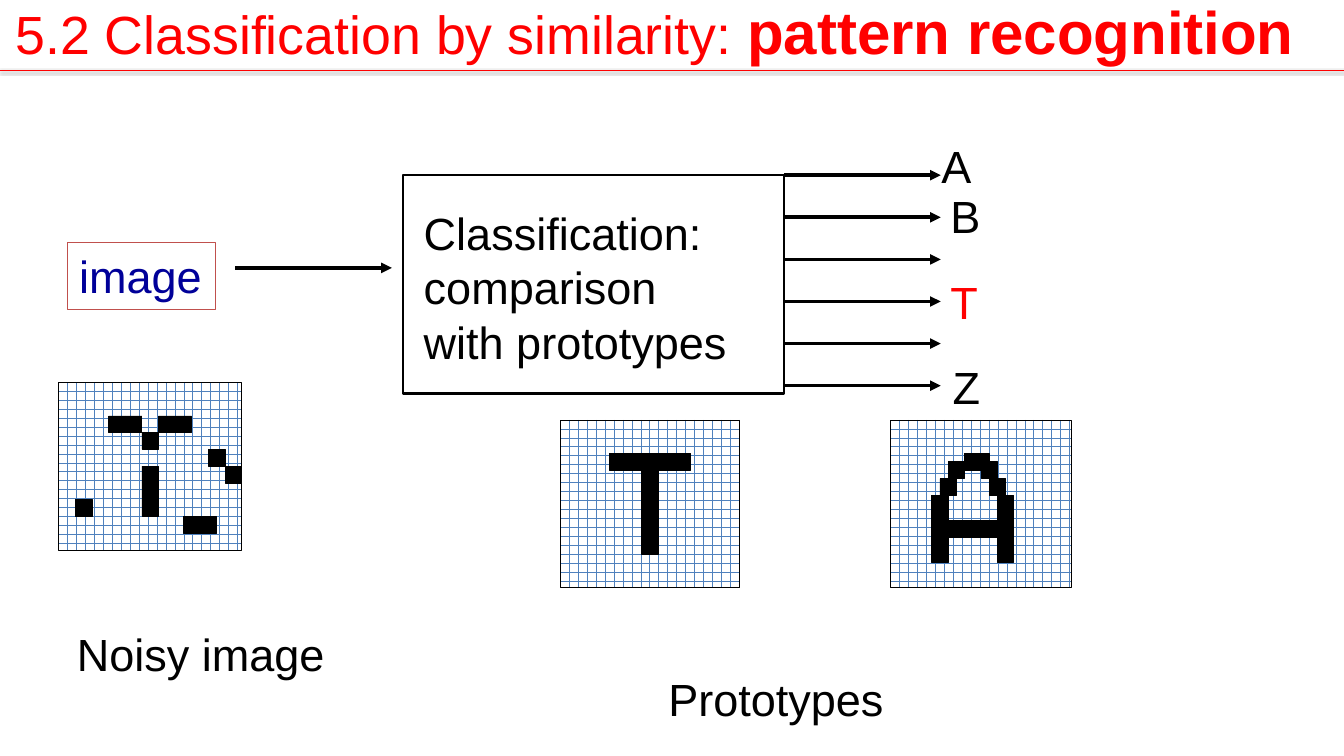
from dataclasses import dataclass

from lxml import etree
from pptx import Presentation
from pptx.dml.color import RGBColor
from pptx.enum.dml import MSO_PATTERN
from pptx.enum.shapes import MSO_CONNECTOR, MSO_SHAPE
from pptx.enum.text import MSO_AUTO_SIZE
from pptx.oxml.ns import qn
from pptx.util import Inches, Pt

RECTANGLE = MSO_SHAPE.RECTANGLE
STRAIGHT = MSO_CONNECTOR.STRAIGHT
DOTTED_GRID = MSO_PATTERN.DOTTED_GRID
FIT_SHAPE = MSO_AUTO_SIZE.SHAPE_TO_FIT_TEXT

SLIDE_WIDTH, SLIDE_HEIGHT = 23.63, 13.29
FONT = "Arial"
BLACK, RED, NAVY = "000000", "FF0000", "000099"
WHITE, BLUE, BRICK = "FFFFFF", "4F81BD", "C0504D"
PANEL_COLUMNS, PANEL_ROWS = 11, 10
PANEL_HEIGHT = 2.95
FIRST_OUTPUT, OUTPUT_GAP, OUTPUT_COUNT = 3.08, 0.74, 6


@dataclass
class Label:
    lines: list[str]
    left: float
    top: float
    width: float
    height: float = 1.17
    color: str = BLACK
    size: int = 57
    border: str | None = None


@dataclass
class Panel:
    """A dotted grid with black cells given as (column, row)."""
    left: float
    top: float
    width: float
    cells: list[tuple[float, float]]


LABELS = [
    Label(["image"], 1.18, 4.26, 2.61, color=NAVY, border=BRICK),
    Label(["Classification:", "comparison", "with prototypes"], 7.24, 3.51, 5.81, 3.09),
    Label(["A"], 16.34, 2.32, 0.96),
    Label(["B"], 16.5, 3.21, 0.96),
    Label(["T"], 16.5, 4.71, 0.92, color=RED),
    Label(["Z"], 16.54, 6.21, 0.92),
    Label(["Prototypes"], 11.54, 11.69, 4.25),
    Label(["Noisy image"], 1.14, 10.91, 4.83),
]

LETTER_T = [(column, 2) for column in range(3, 8)] + [(5, row) for row in range(3, 8)]
LETTER_A = (
    [(4.5, 2), (5, 2), (3.5, 2.5), (5.5, 2.5), (3, 3.5), (6, 3.5)]
    + [(column, row) for column in (2.5, 6.5) for row in (4.5, 5.5, 6.5, 7.5)]
    + [(column, 6) for column in (3.5, 4.5, 5.5)]
)
NOISY_T = (
    [(column, 2) for column in (3, 4, 6, 7)]
    + [(5, row) for row in (3, 5, 6, 7)]
    + [(1, 7), (9, 4), (10, 5), (7.5, 8), (8.5, 8)]
)
PANELS = [
    Panel(9.85, 7.38, 3.15, LETTER_T),
    Panel(15.66, 7.38, 3.17, LETTER_A),
    Panel(1.03, 6.72, 3.22, NOISY_T),
]


def rgb(color: str) -> RGBColor:
    return RGBColor.from_string(color)


def set_line(shape, color: str, width: float) -> None:
    shape.line.color.rgb = rgb(color)
    shape.line.width = Pt(width)


def add_rectangle(shapes, left: float, top: float, width: float, height: float,
                  line_width: float):
    shape = shapes.add_shape(RECTANGLE, Inches(left), Inches(top),
                             Inches(width), Inches(height))
    shape.shadow.inherit = False
    set_line(shape, BLACK, line_width)
    return shape


def add_line(slide, start: float, end: float, y: float, color: str, width: float):
    """Add a horizontal line and return it with its empty effect list."""
    connector = slide.shapes.add_connector(STRAIGHT, Inches(start), Inches(y),
                                           Inches(end), Inches(y))
    set_line(connector, color, width)
    effects = etree.SubElement(connector._element.spPr, qn("a:effectLst"))
    return connector, effects


def add_arrow(slide, start: float, end: float, y: float) -> None:
    connector, _ = add_line(slide, start, end, y, BLACK, 4.5)
    outline = connector._element.spPr.find(qn("a:ln"))
    etree.SubElement(outline, qn("a:tailEnd"), type="triangle")


def add_title_rule(slide) -> None:
    _, effects = add_line(slide, 0, SLIDE_WIDTH, 1.24, RED, 2)
    shadow = etree.SubElement(effects, qn("a:outerShdw"), blurRad=str(Pt(3.1)),
                              dist=str(Pt(1.6)), dir="5400000", rotWithShape="0")
    color = etree.SubElement(shadow, qn("a:srgbClr"), val=BLACK)
    etree.SubElement(color, qn("a:alpha"), val="38000")


def add_label(slide, label: Label):
    box = slide.shapes.add_textbox(Inches(label.left), Inches(label.top),
                                   Inches(label.width), Inches(label.height))
    if label.border:
        set_line(box, label.border, 0.75)
    frame = box.text_frame
    frame.word_wrap = False
    frame.auto_size = FIT_SHAPE
    frame.margin_left = frame.margin_right = Inches(0.21)
    frame.margin_top = frame.margin_bottom = Inches(0.11)
    frame.text = "\n".join(label.lines)
    for paragraph in frame.paragraphs:
        paragraph.font.name = FONT
        paragraph.font.size = Pt(label.size)
        paragraph.font.color.rgb = rgb(label.color)
    return box


def add_title(slide) -> None:
    title = Label(["5.2 Classification by similarity: "], 0.06, -0.21, 23.12, 1.49, RED, 68)
    paragraph = add_label(slide, title).text_frame.paragraphs[0]
    topic = paragraph.add_run()
    topic.text = "pattern recognition"
    topic.font.size = Pt(76)
    topic.font.bold = True


def add_panel(slide, panel: Panel) -> None:
    shapes = slide.shapes.add_group_shape().shapes
    grid = add_rectangle(shapes, panel.left, panel.top, panel.width, PANEL_HEIGHT, 0.75)
    grid.fill.patterned()
    grid.fill.pattern = DOTTED_GRID
    grid.fill.fore_color.rgb = rgb(BLUE)
    grid.fill.back_color.rgb = rgb(WHITE)
    cell_width = panel.width / PANEL_COLUMNS
    cell_height = PANEL_HEIGHT / PANEL_ROWS
    for column, row in panel.cells:
        cell = add_rectangle(shapes, panel.left + column * cell_width,
                             panel.top + row * cell_height, cell_width, cell_height, 0.75)
        cell.fill.solid()
        cell.fill.fore_color.rgb = rgb(BLACK)


def main() -> None:
    presentation = Presentation()
    presentation.slide_width = Inches(SLIDE_WIDTH)
    presentation.slide_height = Inches(SLIDE_HEIGHT)
    slide = presentation.slides.add_slide(presentation.slide_layouts[6])

    # Classifier box with its input and outputs
    classifier = add_rectangle(slide.shapes, 7.09, 3.08, 6.7, 3.84, 3)
    classifier.fill.background()
    add_arrow(slide, 4.14, 6.89, 4.71)
    for index in range(OUTPUT_COUNT):
        add_arrow(slide, 13.78, 16.54, FIRST_OUTPUT + index * OUTPUT_GAP)

    # Title and labels
    add_title(slide)
    for label in LABELS:
        add_label(slide, label)
    add_title_rule(slide)

    # Letter panels
    for panel in PANELS:
        add_panel(slide, panel)

    presentation.save("out.pptx")


if __name__ == "__main__":
    main()
